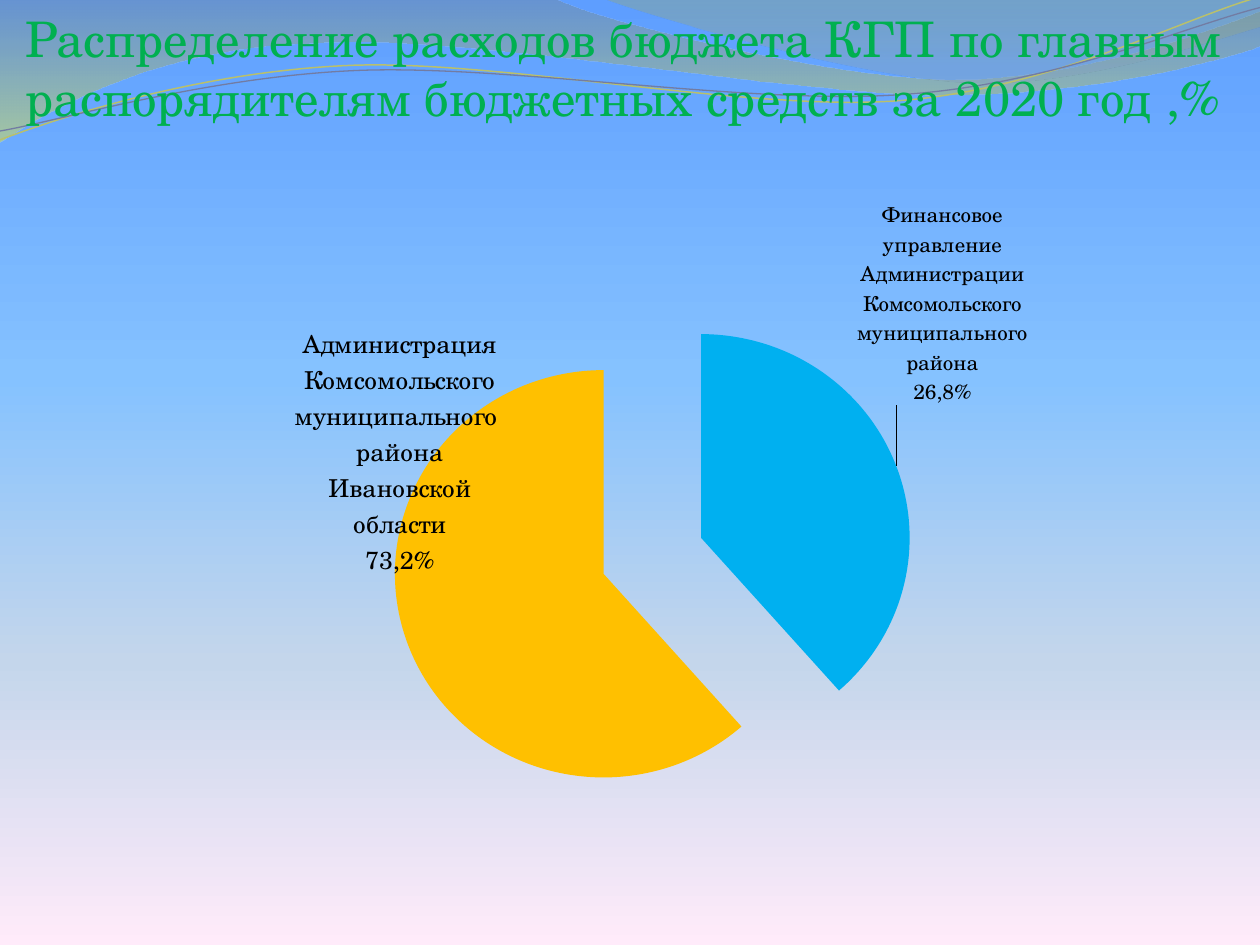
from dataclasses import dataclass

from lxml import etree
from pptx import Presentation
from pptx import util as u
from pptx.chart.data import CategoryChartData
from pptx.dml.color import RGBColor
from pptx.enum import chart as ch
from pptx.enum import text
from pptx.oxml import parse_xml
from pptx.oxml.ns import nsdecls, qn


@dataclass(frozen=True)
class Theme:
    font: str = "TeX Gyre Schola"
    title: str = "00B050"
    title_outline: str = "8B8B9D"
    label: str = "000000"
    title_size: float = 28
    finance_size: float = 12
    admin_size: float = 14.4
    label_size: float = 11
    chart_size: float = 10
    finance: str = "00B0F0"
    admin: str = "FFC000"
    # gradient stops: position %, colour, opacity %
    sky: tuple = ((0, "5E9EFF", 100), (40, "85C2FF", 100),
                  (70, "C4D6EB", 100), (100, "FFEBFA", 100))
    wide_wave: tuple = ((0, "72889B", 45), (100, "D3DE57", 55))
    right_wave: tuple = ((0, "A4AC50", 30), (80, "84A3BD", 45))
    olive_line: str = "B9C06C"
    violet_line: str = "727CA3"


T = Theme()

# Outlines: a start point, then line ends (2 numbers) or cubic curves (6 numbers)
WIDE_WAVE = [(0, 0), (4.4, -0.01), (4.76, 0.17, 6.64, 0.63, 7.58, 0.63),
             (8.53, 0.63, 9.58, 0.26, 10, 0.09), (10.01, 0.36),
             (9.83, 0.44, 8.7, 0.76, 7.46, 0.75), (6.22, 0.75, 3.82, 0.28, 2.57, 0.34),
             (1.29, 0.36, 0.46, 0.83, -0.01, 1.13), (0, 0)]
RIGHT_WAVE = [(4.79, -0.01), (5.09, 0.11, 6.82, 0.62, 7.69, 0.65),
              (8.56, 0.69, 9.61, 0.32, 10, 0.21), (10, 0), (4.79, -0.01)]
OLIVE_LINE = [(0, 1.11), (0.48, 0.93, 1.58, 0.57, 2.77, 0.52),
              (3.95, 0.47, 5.93, 0.89, 7.13, 0.8), (8.33, 0.71, 9.38, 0.15, 9.98, -0.02)]
VIOLET_LINE = [(0, 1.04), (0.47, 0.96, 1.64, 0.61, 2.83, 0.56),
               (4.03, 0.51, 5.97, 0.84, 7.17, 0.75), (8.36, 0.67, 9.41, 0.21, 10, 0.06)]

TITLE = ("Распределение расходов бюджета КГП по главным "
         "распорядителям бюджетных средств за 2020 год ,%")
# category, value, shown share, colour, label size, label shift (parts of the chart)
SLICES = [
    ("Финансовое управление Администрации Комсомольского муниципального района",
     0.385, "26,8%", T.finance, T.finance_size, (-0.04, -0.08)),
    ("Администрация Комсомольского муниципального  района Ивановской области",
     0.615, "73,2%", T.admin, T.admin_size, (0.09, -0.45)),
]


def rgb(color):
    return RGBColor.from_string(color)


def set_gradient(fill, owner, stops):
    """Give fill a top-to-bottom gradient; owner is the XML element around it."""
    fill.gradient()
    fill.gradient_angle = 270
    gs_list = owner.find(".//" + qn("a:gsLst"))
    for gs in list(gs_list):
        gs_list.remove(gs)
    for pos, color, opacity in stops:
        gs = etree.SubElement(gs_list, qn("a:gs"), pos=str(pos * 1000))
        clr = etree.SubElement(gs, qn("a:srgbClr"), val=color)
        if opacity < 100:
            etree.SubElement(clr, qn("a:alpha"), val=str(opacity * 1000))


def bend_segments(sp, parts):
    """Turn the straight segments of sp into cubic curves where parts say so."""
    segments = sp._element.findall(".//" + qn("a:lnTo"))
    for segment, part in zip(segments, parts):
        if len(part) == 2:
            continue
        curve = etree.Element(qn("a:cubicBezTo"))
        for x, y in zip(part[::2], part[1::2]):
            etree.SubElement(curve, qn("a:pt"), x=str(u.Inches(x) - sp.left),
                             y=str(u.Inches(y) - sp.top))
        segment.getparent().replace(segment, curve)


def add_outline(slide, outline, stops=None, line=None, width=0.75):
    """Draw a closed gradient area (stops) or an open line."""
    ends = [(u.Inches(part[-2]), u.Inches(part[-1])) for part in outline]
    builder = slide.shapes.build_freeform(*ends[0], scale=1.0)
    builder.add_line_segments(ends[1:-1] if stops else ends[1:],
                              close=stops is not None)
    sp = builder.convert_to_shape()
    bend_segments(sp, outline[1:])
    sp.shadow.inherit = False
    if stops:
        set_gradient(sp.fill, sp._element, stops)
        sp.line.fill.background()
    else:
        sp.fill.background()
        sp.line.color.rgb = rgb(line)
        sp.line.width = u.Pt(width)


def write(p, content, size, color, outline=None):
    r = p.add_run()
    r.text = content
    r.font.name = T.font
    r.font.size = u.Pt(size)
    r.font.color.rgb = rgb(color)
    if outline:
        r.font._element.insert(0, parse_xml(
            f'<a:ln {nsdecls("a")} w="9525"><a:solidFill>'
            f'<a:srgbClr val="{outline}"/></a:solidFill></a:ln>'))


def add_title(slide):
    sp = slide.shapes.add_textbox(u.Inches(0.2), u.Inches(0.13),
                                  u.Inches(9.53), u.Inches(0.87))
    tf = sp.text_frame
    tf.word_wrap = True
    tf.vertical_anchor = text.MSO_ANCHOR.BOTTOM
    tf.margin_left = tf.margin_right = tf.margin_bottom = 0
    tf.margin_top = u.Inches(0.05)
    write(tf.paragraphs[0], TITLE, T.title_size, T.title, outline=T.title_outline)


def manual_layout(modes="", **values):
    body = "".join(f'<c:{key} val="{val}"/>' for key, val in values.items())
    return parse_xml(f'<c:layout {nsdecls("c")}><c:manualLayout>'
                     f'{modes}{body}</c:manualLayout></c:layout>')


def place_plot(chart):
    area = chart._chartSpace.find(".//" + qn("c:plotArea"))
    for old in area.findall(qn("c:layout")):
        area.remove(old)
    area.insert(0, manual_layout(
        '<c:layoutTarget val="inner"/><c:xMode val="edge"/><c:yMode val="edge"/>',
        x=0.16, y=0.19, w=0.72, h=0.71))


def label_slice(point, category, share, size, shift):
    label = point.data_label
    tf = label.text_frame
    write(tf.paragraphs[0], category, size, T.label)
    write(tf.add_paragraph(), share, size, T.label)
    label.position = ch.XL_LABEL_POSITION.OUTSIDE_END
    d_lbl = tf._txBody.getparent().getparent()
    d_lbl.find(qn("c:idx")).addnext(manual_layout(x=shift[0], y=shift[1]))
    d_lbl.find(qn("c:showCatName")).set("val", "1")


def add_pie(slide):
    data = CategoryChartData(number_format="0.0%")
    data.categories = [s[0] for s in SLICES]
    data.add_series("Series 1", [s[1] for s in SLICES])
    chart = slide.shapes.add_chart(
        ch.XL_CHART_TYPE.PIE, u.Inches(0.43), u.Inches(1.31),
        u.Inches(9.13), u.Inches(5.83), data).chart
    chart.has_legend = chart.has_title = False
    chart.font.name = T.font
    chart.font.size = u.Pt(T.chart_size)
    chart.font.color.rgb = rgb(T.label)
    place_plot(chart)

    plot = chart.plots[0]
    plot.vary_by_categories = True
    series = plot.series[0]
    labels = series.data_labels
    labels.show_value = labels.show_category_name = True
    labels.number_format, labels.number_format_is_linked = "0.0%", False
    labels.font.size = u.Pt(T.label_size)
    for i, (category, _, share, color, size, shift) in enumerate(SLICES):
        point = series.points[i]
        point.format.fill.solid()
        point.format.fill.fore_color.rgb = rgb(color)
        point.format.line.fill.background()
        label_slice(point, category, share, size, shift)
    series._element.find(qn("c:dPt")).addprevious(
        parse_xml(f'<c:explosion {nsdecls("c")} val="25"/>'))


def main():
    prs = Presentation()
    prs.slide_width, prs.slide_height = u.Inches(10), u.Inches(7.5)
    s = prs.slides.add_slide(prs.slide_layouts[6])
    set_gradient(s.background.fill, s._element, T.sky)
    add_outline(s, WIDE_WAVE, stops=T.wide_wave)
    add_outline(s, RIGHT_WAVE, stops=T.right_wave)
    add_outline(s, OLIVE_LINE, line=T.olive_line, width=0.85)
    add_outline(s, VIOLET_LINE, line=T.violet_line)
    add_title(s)
    add_pie(s)
    prs.save("out.pptx")


if __name__ == "__main__":
    main()
